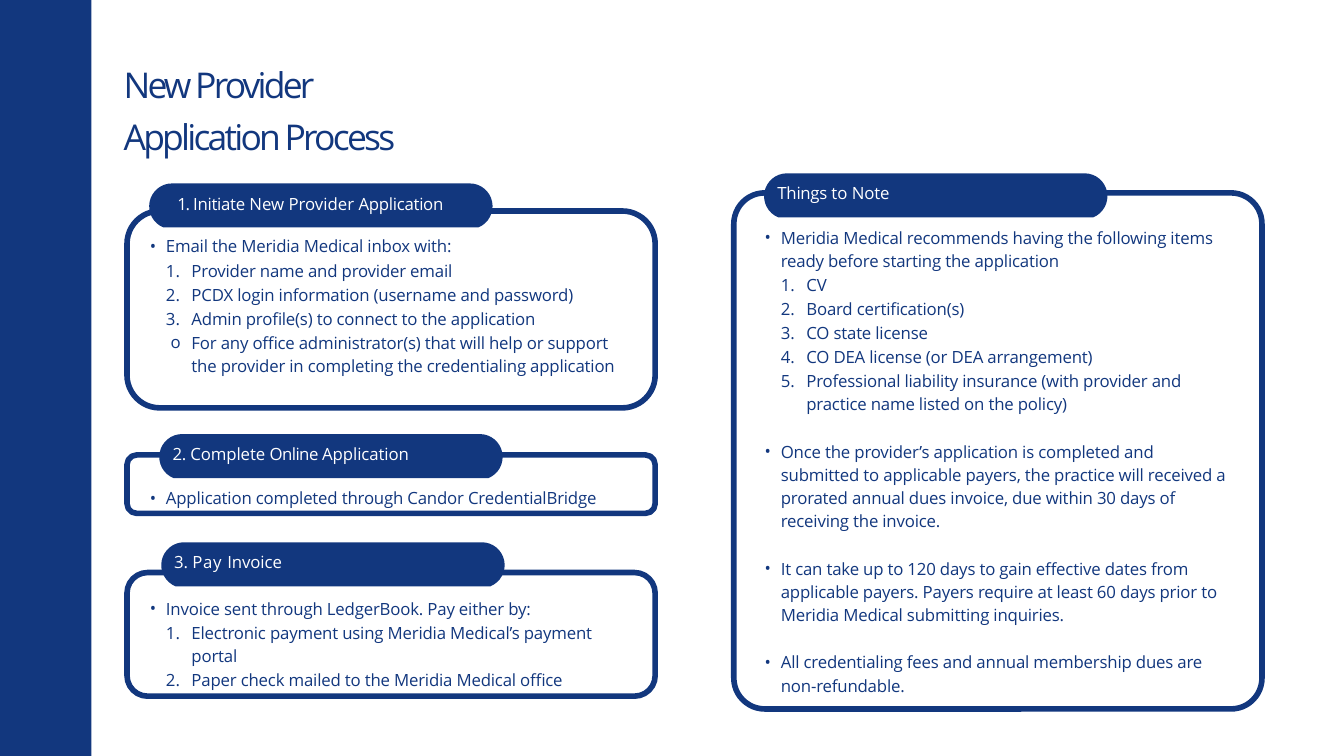
from dataclasses import dataclass
from math import asin, cos, pi, sin

from lxml.etree import SubElement
from pptx import Presentation
from pptx.dml.color import RGBColor
from pptx.enum.shapes import MSO_SHAPE
from pptx.oxml.ns import qn
from pptx.util import Inches, Pt

NAVY, WHITE = "12377E", "FFFFFF"
FONT = "Open Sans"
PILL_W, PILL_H, PILL_R = 5.11, 0.655, 0.34
BODY_W = 6.93
GAP = 26  # space before a paragraph that stands one line apart


@dataclass
class Item:
    text: str
    mark: str = "•"  # "•", "o" or "1" for automatic numbers
    before: float = 0.9


@dataclass
class Panel:
    frame: tuple[float, float, float, float]
    pill: tuple[float, float]
    label: tuple[float, float, float]
    heading: list[tuple[str, float]]  # text and letter spacing of each run
    body: tuple[float, float, float]
    items: list[Item]
    corner: float = 0.1667


PANELS = [
    Panel((1.89, 3.14, 7.86, 2.93), (2.22, 2.73), (2.63, 2.87, 4.1),
          [("1. ", -1.4), ("Initiate ", -0.3), ("New Provider ", 0), ("Application", -0.3)],
          (2.22, 3.46, 2.48),
          [Item("Email the Meridia Medical inbox with:"),
           Item("Provider name and provider email", "1"),
           Item("PCDX login information (username and password)", "1"),
           Item("Admin profile(s) to connect to the application", "1"),
           Item("For any office administrator(s) that will help or support "
                "the provider in completing the credentialing application", "o")]),
    Panel((1.89, 6.77, 7.86, 0.87), (2.37, 6.46), (2.56, 6.59, 5.21),
          [("2. ", -0.4), ("Complete ", -0.1), ("Online ", -0.6), ("Application", -0.1)],
          (2.22, 7.2, 0.33),
          [Item("Application completed through Candor CredentialBridge")]),
    Panel((1.89, 8.52, 7.86, 1.84), (2.4, 8.07), (2.58, 8.2, 1.68),
          [("3. ", 0), ("Pay ", 0.7), ("Invoice", -0.1)],
          (2.22, 8.85, 1.4),
          [Item("Invoice sent through LedgerBook. Pay either by:"),
           Item("Electronic payment using Meridia Medical’s payment portal", "1"),
           Item("Paper check mailed to the Meridia Medical office", "1")]),
    Panel((10.92, 2.87, 7.86, 7.68), (11.37, 2.58), (11.56, 2.71, 1.85),
          [("Things ", -0.3), ("to ", 0), ("Note", -0.2)],
          (11.37, 3.33, 7.1),
          [Item("Meridia Medical recommends having the following items "
                "ready before starting the application"),
           Item("CV", "1"),
           Item("Board certification(s)", "1"),
           Item("CO state license", "1"),
           Item("CO DEA license (or DEA arrangement)", "1"),
           Item("Professional liability insurance (with provider and "
                "practice name listed on the policy)", "1"),
           Item("Once the provider’s application is completed and submitted to "
                "applicable payers, the practice will received a prorated annual "
                "dues invoice, due within 30 days of receiving the invoice.", before=GAP),
           Item("It can take up to 120 days to gain effective dates from applicable "
                "payers. Payers require at least 60 days prior to Meridia Medical "
                "submitting inquiries.", before=GAP),
           Item("All credentialing fees and annual membership dues are "
                "non-refundable.", before=GAP)],
          corner=0.06),
]


def rgb(color: str) -> RGBColor:
    return RGBColor.from_string(color)


def paint(sp, color: str) -> None:
    sp.shadow.inherit = False
    sp.fill.solid()
    sp.fill.fore_color.rgb = rgb(color)
    sp.line.fill.background()


def add_text(s, x: float, y: float, w: float, h: float, top: float = 0.01):
    tf = s.shapes.add_textbox(Inches(x), Inches(y), Inches(w), Inches(h)).text_frame
    tf.word_wrap = True
    tf.margin_left = tf.margin_right = tf.margin_bottom = 0
    tf.margin_top = Inches(top)
    return tf


def add_run(p, text: str, size: float, color: str, spacing: float) -> None:
    r = p.add_run()
    r.text = text
    r.font.name, r.font.size = FONT, Pt(size)
    r.font.color.rgb = rgb(color)
    r._r.get_or_add_rPr().set("spc", str(round(spacing * 100)))


def set_indent(p, left: float, hang: float = 0) -> None:
    pPr = p._p.get_or_add_pPr()
    pPr.set("marL", str(Inches(left)))
    pPr.set("indent", str(-Inches(hang)))


def set_mark(p, mark: str) -> None:
    set_indent(p, *{"•": (0.25, 0.24), "1": (0.63, 0.38), "o": (0.63, 0.31)}[mark])
    pPr = p._p.get_or_add_pPr()
    SubElement(pPr, qn("a:buFont"), typeface=FONT)
    if mark == "1":
        SubElement(pPr, qn("a:buAutoNum"), type="arabicPeriod")
    else:
        SubElement(pPr, qn("a:buChar"), char=mark)


def add_frame(s, panel: Panel) -> None:
    sp = s.shapes.add_shape(MSO_SHAPE.ROUNDED_RECTANGLE, *map(Inches, panel.frame))
    sp.adjustments[0] = panel.corner
    sp.shadow.inherit = False
    sp.fill.background()
    sp.line.color.rgb = rgb(NAVY)
    sp.line.width = Pt(6)


def add_pill(s, x: float, y: float) -> None:
    """Round-ended bar whose circles are cut off by the flat bottom edge."""
    cut = asin((PILL_H - PILL_R) / PILL_R)
    steps = 16
    angles = [pi - cut + (pi / 2 + cut) * i / steps for i in range(steps + 1)]
    left = [(PILL_R + PILL_R * cos(a), PILL_R + PILL_R * sin(a)) for a in angles]
    right = [(PILL_W - px, py) for px, py in reversed(left)]
    points = [(Inches(x + px), Inches(y + py)) for px, py in left + right]
    fb = s.shapes.build_freeform(*points[0])
    fb.add_line_segments(points[1:], close=True)
    paint(fb.convert_to_shape(), NAVY)


def add_heading(s, panel: Panel) -> None:
    p = add_text(s, *panel.label, 0.33).paragraphs[0]
    p.space_before = Pt(1)
    set_indent(p, 0.01)
    for text, spacing in panel.heading:
        add_run(p, text, 18, WHITE, spacing)


def add_items(s, panel: Panel) -> None:
    x, y, h = panel.body
    tf = add_text(s, x, y, BODY_W, h)
    for i, item in enumerate(panel.items):
        p = tf.add_paragraph() if i else tf.paragraphs[0]
        p.line_spacing = 1.15
        p.space_before = Pt(item.before)
        set_mark(p, item.mark)
        add_run(p, item.text, 18, NAVY, -0.2)


def main() -> None:
    prs = Presentation()
    prs.slide_width, prs.slide_height = Inches(20), Inches(11.25)
    s = prs.slides.add_slide(prs.slide_layouts[6])

    # Side band
    band = s.shapes.add_shape(MSO_SHAPE.RECTANGLE, 0, 0, Inches(1.36), prs.slide_height)
    paint(band, NAVY)

    # Title
    p = add_text(s, 1.83, 0.7, 11.42, 1.59, top=0.1).paragraphs[0]
    p.line_spacing, p.space_before = Pt(55.5), Pt(7)
    set_indent(p, 0.01)
    add_run(p, "New Provider", 38, NAVY, -3)
    p.add_line_break()
    add_run(p, "Application Process", 38, NAVY, -3)

    # Panels
    for panel in PANELS:
        add_frame(s, panel)
        add_pill(s, *panel.pill)
        add_heading(s, panel)
        add_items(s, panel)

    prs.save("out.pptx")


if __name__ == "__main__":
    main()
